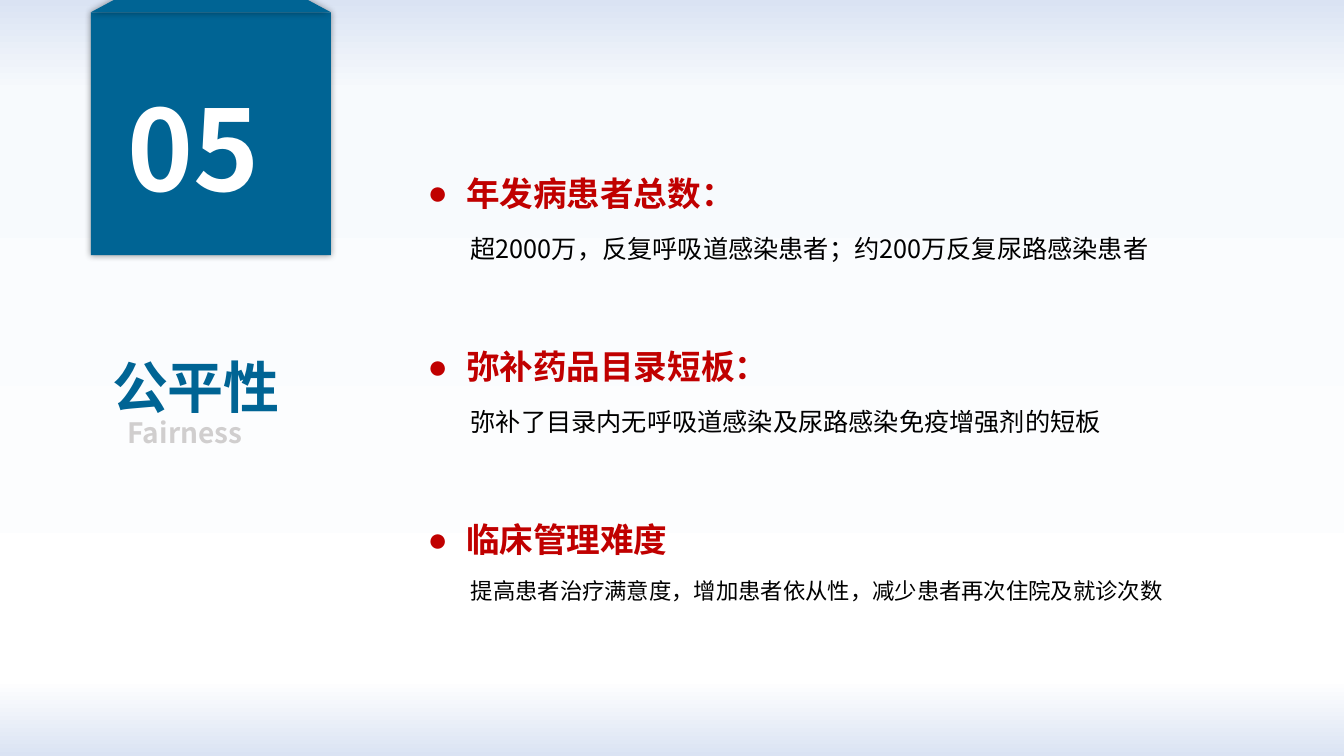
from pptx import Presentation
from pptx.dml.color import RGBColor as Rgb
from pptx.enum.shapes import MSO_SHAPE as Shape
from pptx.enum.text import MSO_ANCHOR as Anchor, MSO_AUTO_SIZE as Auto, PP_ALIGN as Align
from pptx.oxml import parse_xml
from pptx.oxml.ns import nsdecls
from pptx.util import Cm, Pt

FACE = "Noto Sans CJK SC"
BLUE, RED, GREY = "006494", "C00000", "D0CECE"
NS = nsdecls("a")


def style(para, size, color, bold=True):
    para.line_spacing = 1.5
    for run in para.runs:
        font = run.font
        font.name, font.size, font.bold = FACE, Pt(size), bold
        font.color.rgb = Rgb.from_string(color)
        font._element.append(parse_xml(f'<a:ea {NS} typeface="{FACE}"/>'))


def paint(shape):
    """Fill a ribbon part and give it a soft shadow on all sides."""
    shape.fill.solid()
    shape.fill.fore_color.rgb = Rgb.from_string(BLUE)
    shape.line.fill.background()
    shape._element.spPr.append(parse_xml(
        f'<a:effectLst {NS}><a:outerShdw blurRad="{Pt(5)}" dist="0" algn="ctr">'
        '<a:srgbClr val="000000"><a:alpha val="40000"/></a:srgbClr>'
        '</a:outerShdw></a:effectLst>'))


deck = Presentation()
deck.slide_width, deck.slide_height = Cm(33.87), Cm(19.05)
slide = deck.slides.add_slide(deck.slide_layouts[1])
shapes = slide.shapes

# Background
fill = slide.background.fill
fill.gradient()
fill.gradient_angle = 270
stops = fill._fill._gradFill.gsLst
for stop in list(stops):
    stops.remove(stop)
for pos, color in [(0, "DAE3F3"), (12, "F7FAFD"), (90, "FFFFFF"), (100, "DAE3F3")]:
    stops.append(parse_xml(
        f'<a:gs {NS} pos="{pos * 1000}"><a:srgbClr val="{color}"/></a:gs>'))

# Ribbon
left, wide, fold, slant = 2.29, 6.05, 0.31, 0.58
paint(shapes.add_shape(Shape.RECTANGLE, Cm(left), Cm(fold), Cm(wide), Cm(6.12)))
right = left + wide
pen = shapes.build_freeform(Cm(left + slant), 0)
pen.add_line_segments([(Cm(x), Cm(y)) for x, y in [
    (right - slant, 0), (right, fold), (left, fold)]])
paint(pen.convert_to_shape())

# Section number, title and subtitle
number = shapes.add_textbox(Cm(2.97), Cm(1.88), Cm(4.14), Cm(3.68))
title = shapes.title
title.left, title.top, title.width, title.height = Cm(2.57), Cm(7.9), Cm(5.08), Cm(2.51)
label = shapes.add_textbox(Cm(2.97), Cm(9.91), Cm(4.37), Cm(1.4))
for box, text, size, color in [(number, "05", 80, "FFFFFF"),
                               (title, "公平性", 40, BLUE),
                               (label, "Fairness", 20, GREY)]:
    frame = box.text_frame
    frame.text = text
    frame.word_wrap, frame.auto_size = True, Auto.NONE
    frame.vertical_anchor = Anchor.TOP
    para = frame.paragraphs[0]
    para.alignment = Align.JUSTIFY
    style(para, size, color)
number.text_frame.paragraphs[0].line_spacing = 1

# Points, each a red heading above one line of detail
points = [
    ("年发病患者总数：", "超2000万，反复呼吸道感染患者；约200万反复尿路感染患者", 18),
    ("弥补药品目录短板：", "弥补了目录内无呼吸道感染及尿路感染免疫增强剂的短板", 18),
    ("临床管理难度", "提高患者治疗满意度，增加患者依从性，减少患者再次住院及就诊次数", 16),
]
body = slide.placeholders[1]
body.left, body.top, body.width, body.height = Cm(10.52), Cm(3.73), Cm(22.71), Cm(11.6)
frame = body.text_frame
frame.auto_size = Auto.NONE
frame.text = "\n".join(line for head, note, _ in points for line in (head, note))
paras = frame.paragraphs
for i, (_, _, size) in enumerate(points):
    head, note = paras[2 * i:2 * i + 2]
    for para, margin, indent, mark in [
            (head, 0.97, -0.97, '<a:buChar {} char="●"/>'),
            (note, 1.09, 0, '<a:buNone {}/>')]:
        props = para._p.get_or_add_pPr()
        props.set("marL", str(Cm(margin)))
        props.set("indent", str(Cm(indent)))
        props.append(parse_xml(mark.format(NS)))
    head.space_before = Pt(45 if i else 0)
    note.space_before = Pt(3)
    style(head, 24, RED)
    style(note, size, "000000", False)

deck.save("out.pptx")
